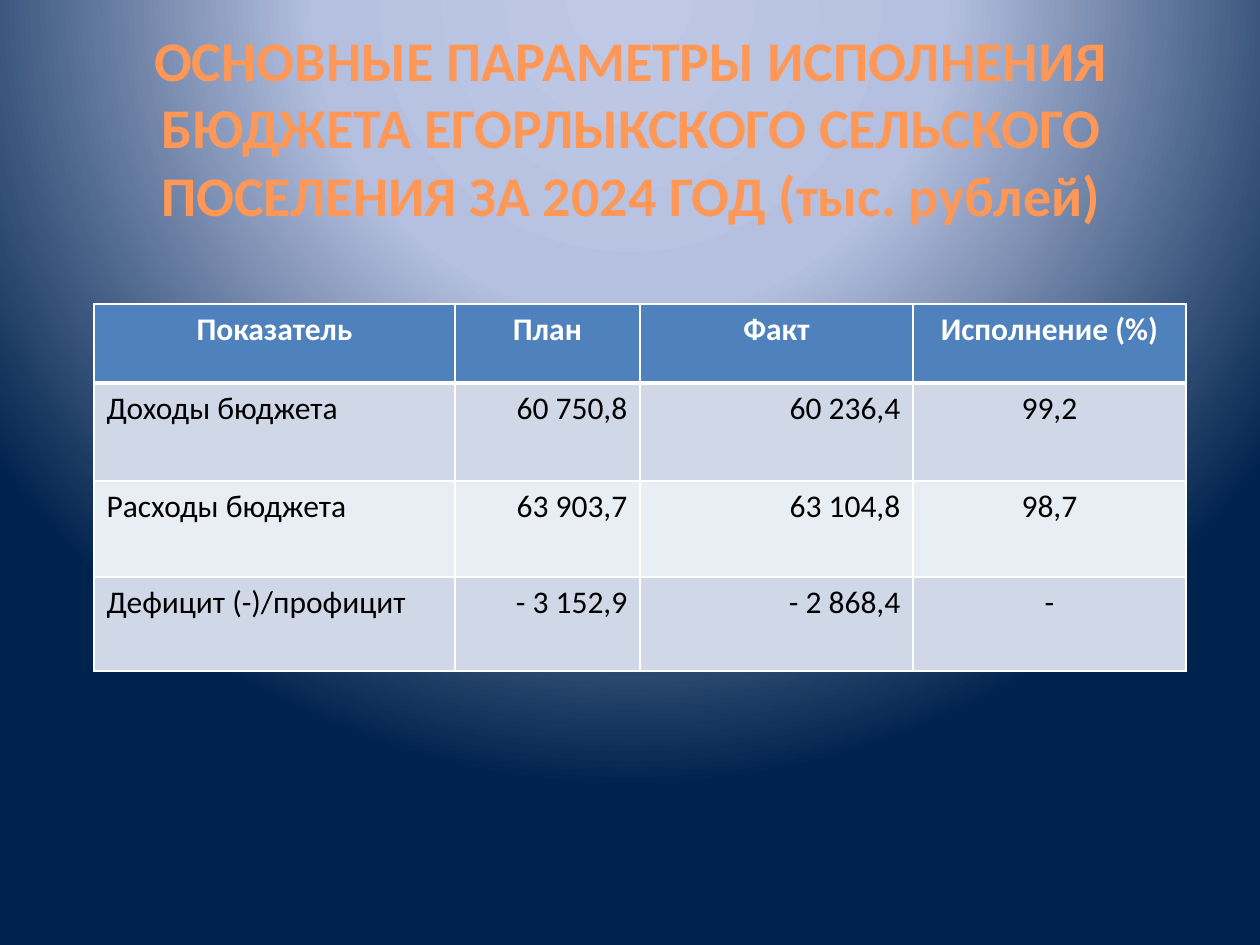
"""Build the slide on the 2024 settlement budget: a title over a table of plan and fact."""
from lxml import etree
from pptx import Presentation
from pptx import util as u
from pptx.dml.color import RGBColor
from pptx.enum import text
from pptx.oxml.ns import qn

PX = u.Inches(1) / 126
WHITE = RGBColor(0xFF, 0xFF, 0xFF)
BLACK = RGBColor(0x00, 0x00, 0x00)
HEADER_BLUE = RGBColor(0x4F, 0x81, 0xBD)
BAND_DARK = RGBColor(0xD0, 0xD8, 0xE8)
BAND_LIGHT = RGBColor(0xE9, 0xED, 0xF4)
SKY_STOPS = [
    (0, RGBColor(0xBF, 0xC9, 0xE5)),
    (40, RGBColor(0xB5, 0xC0, 0xE0)),
    (100, RGBColor(0x00, 0x23, 0x4D)),
]
TITLE_STOPS = [
    (0, RGBColor(0x9D, 0x47, 0x00)),
    (78, RGBColor(0xFF, 0x98, 0x56)),
    (100, RGBColor(0xFF, 0xF5, 0xF1)),
]


def px(count):
    return u.Emu(round(count * PX))


def start_gradient(owner, stops):
    gradient = next(owner.iter(qn("a:gradFill")))
    for child in list(gradient):
        gradient.remove(child)
    stop_list = etree.SubElement(gradient, qn("a:gsLst"))
    for percent, color in stops:
        stop = etree.SubElement(stop_list, qn("a:gs"), pos=str(percent * 1000))
        etree.SubElement(stop, qn("a:srgbClr"), val=str(color))
    return gradient


deck = Presentation()
deck.slide_width, deck.slide_height = px(1260), px(945)
page = deck.slides.add_slide(deck.slide_layouts[5])

page.background.fill.gradient()
sky = start_gradient(page.background._cSld, SKY_STOPS)
circle = etree.SubElement(sky, qn("a:path"), path="circle")
etree.SubElement(circle, qn("a:fillToRect"), l="50000", t="-80000", r="50000", b="180000")

title = page.shapes.title
title.left, title.top, title.width, title.height = px(64), px(18), px(1134), px(217)
frame = title.text_frame
frame.text = "ОСНОВНЫЕ ПАРАМЕТРЫ ИСПОЛНЕНИЯ БЮДЖЕТА ЕГОРЛЫКСКОГО СЕЛЬСКОГО ПОСЕЛЕНИЯ ЗА 2024 ГОД (тыс. рублей)"
frame.word_wrap = True
frame.auto_size = text.MSO_AUTO_SIZE.NONE
frame.vertical_anchor = text.MSO_ANCHOR.MIDDLE
para = frame.paragraphs[0]
para.alignment = text.PP_ALIGN.CENTER
span = para.runs[0]
span.font.name, span.font.size, span.font.bold = "Calibri", u.Pt(32), True
span.font.fill.gradient()
glow = start_gradient(span._r, TITLE_STOPS)
etree.SubElement(glow, qn("a:lin"), ang="5400000", scaled="0")

ROWS = [
    ("Показатель", "План", "Факт", "Исполнение (%)"),
    ("Доходы бюджета", "60 750,8", "60 236,4", "99,2"),
    ("Расходы бюджета", "63 903,7", "63 104,8", "98,7"),
    ("Дефицит (-)/профицит", "- 3 152,9", "- 2 868,4", "-"),
]
COLUMN_WIDTHS = [361, 185, 273, 273]
ROW_HEIGHTS = [79, 98, 96, 94]
FILLS = [HEADER_BLUE, BAND_DARK, BAND_LIGHT, BAND_DARK]
ALIGNS = [text.PP_ALIGN.LEFT, text.PP_ALIGN.RIGHT, text.PP_ALIGN.RIGHT, text.PP_ALIGN.CENTER]

table = page.shapes.add_table(
    len(ROWS), len(COLUMN_WIDTHS), px(94), px(304), px(sum(COLUMN_WIDTHS)), px(sum(ROW_HEIGHTS))
).table
for column, width in zip(table.columns, COLUMN_WIDTHS):
    column.width = px(width)

for r, values in enumerate(ROWS):
    table.rows[r].height = px(ROW_HEIGHTS[r])
    is_header = r == 0
    for c, value in enumerate(values):
        cell = table.cell(r, c)
        cell.text = value
        para = cell.text_frame.paragraphs[0]
        para.alignment = text.PP_ALIGN.CENTER if is_header else ALIGNS[c]
        font = para.runs[0].font
        font.name, font.size, font.bold = "Calibri", u.Pt(18), is_header
        font.color.rgb = WHITE if is_header else BLACK
        borders = {"lnL": 1, "lnR": 1, "lnT": 3 if r == 1 else 1, "lnB": 3 if is_header else 1}
        properties = cell._tc.get_or_add_tcPr()
        for side, points in borders.items():
            line = etree.SubElement(properties, qn(f"a:{side}"), w=str(u.Pt(points)))
            paint = etree.SubElement(line, qn("a:solidFill"))
            etree.SubElement(paint, qn("a:srgbClr"), val=str(WHITE))
        cell.fill.solid()
        cell.fill.fore_color.rgb = FILLS[r]

deck.save("out.pptx")
